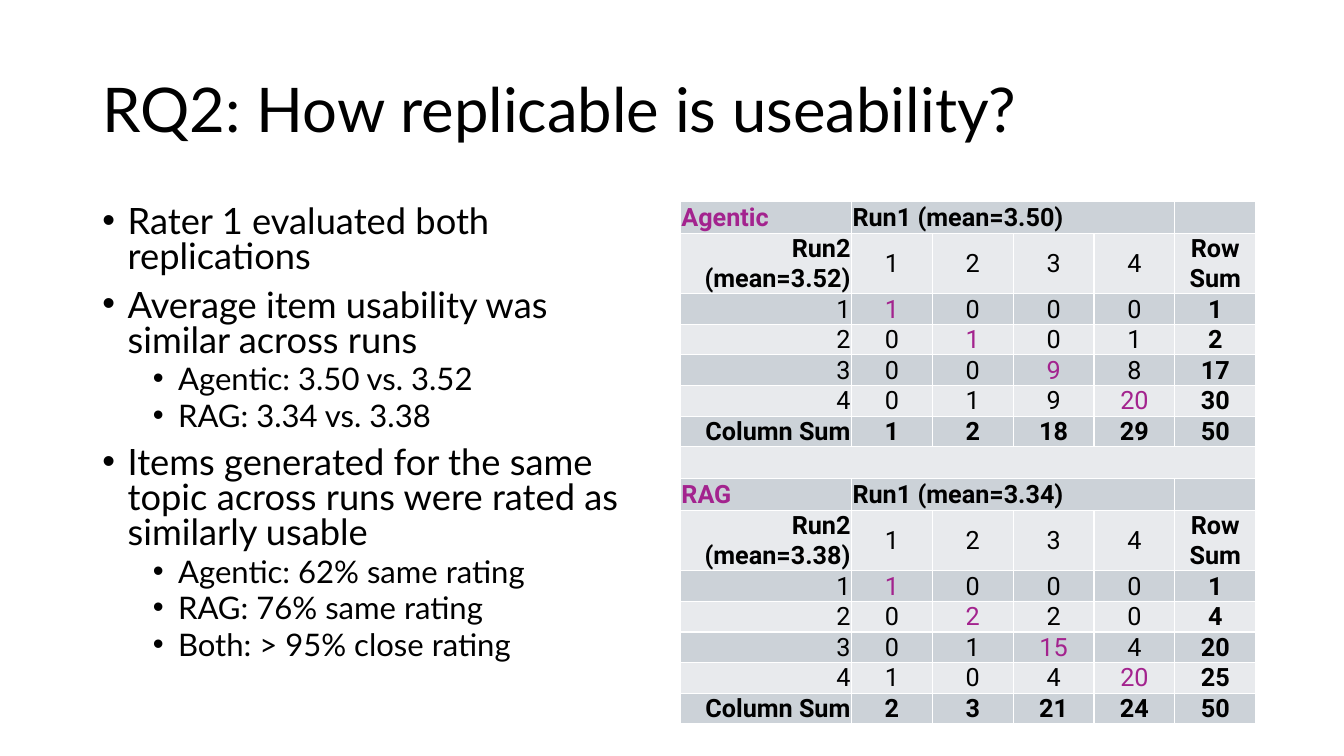
from dataclasses import dataclass

from lxml import etree
from pptx import Presentation
from pptx import util as u
from pptx.dml.color import RGBColor
from pptx.enum import text
from pptx.oxml import ns

PX = 9525


@dataclass(frozen=True)
class Theme:
    ink: str = "000000"
    accent: str = "A3238E"
    rule: str = "FFFFFF"
    bands: tuple = ("CCD2D8", "E8EAED")
    body_font: str = "Lato"
    table_font: str = "Roboto"
    title_size: float = 44
    bullet_sizes: tuple = (25.9, 22.2)
    table_size: float = 18


THEME = Theme()
LEFT, CENTER, RIGHT = text.PP_ALIGN.LEFT, text.PP_ALIGN.CENTER, text.PP_ALIGN.RIGHT

TITLE = "RQ2: How replicable is useability?"
BULLETS = [
    (0, "Rater 1 evaluated both replications"),
    (0, "Average item usability was similar across runs"),
    (1, "Agentic: 3.50 vs. 3.52"),
    (1, "RAG: 3.34 vs. 3.38"),
    (0, "Items generated for the same topic across runs were rated as similarly usable"),
    (1, "Agentic: 62% same rating"),
    (1, "RAG: 76% same rating"),
    (1, "Both: > 95% close rating"),
]
RATINGS = [1, 2, 3, 4]
SYSTEMS = [
    ("Agentic", "3.50", "3.52",
     [[1, 0, 0, 0], [0, 1, 0, 1], [0, 0, 9, 8], [0, 1, 9, 20]]),
    ("RAG", "3.34", "3.38",
     [[1, 0, 0, 0], [0, 2, 2, 0], [0, 1, 15, 4], [1, 0, 4, 20]]),
]
BLOCK_ROWS = 8
ROW_HEIGHT, HEADER_HEIGHT = 29, 57


def px(n):
    return u.Emu(n * PX)


def write(p, content, font=THEME.body_font, size=THEME.table_size,
          color=THEME.ink, bold=False, align=LEFT):
    p.alignment = align
    r = p.add_run()
    r.text = str(content)
    r.font.name = font
    r.font.size = u.Pt(size)
    r.font.bold = bold
    r.font.color.rgb = RGBColor.from_string(color)


def place(sp, left, top, width, height):
    sp.left, sp.top, sp.width, sp.height = map(px, (left, top, width, height))
    sp.text_frame.auto_size = text.MSO_AUTO_SIZE.NONE
    return sp.text_frame


def fill_title(sp):
    tf = place(sp, 88, 38, 1104, 139)
    tf.vertical_anchor = text.MSO_ANCHOR.MIDDLE
    p = tf.paragraphs[0]
    p.line_spacing = 0.9
    write(p, TITLE, size=THEME.title_size)


def fill_bullets(sp):
    tf = place(sp, 88, 192, 544, 457)
    for i, (level, content) in enumerate(BULLETS):
        p = tf.add_paragraph() if i else tf.paragraphs[0]
        p.level = level
        p.line_spacing = 0.8
        p.space_before = u.Pt((10, 5)[level])
        write(p, content, size=THEME.bullet_sizes[level])
        pPr = p._p.get_or_add_pPr()
        pPr.set("marL", str(px((24, 72)[level])))
        pPr.set("indent", str(px(-24)))
        etree.SubElement(pPr, ns.qn("a:buFont")).set("typeface", "Arial")
        etree.SubElement(pPr, ns.qn("a:buChar")).set("char", "•")


def style_cell(cell, band):
    cell.margin_left = cell.margin_right = cell.margin_top = px(1)
    cell.margin_bottom = 0
    cell.vertical_anchor = text.MSO_ANCHOR.MIDDLE
    tcPr = cell._tc.get_or_add_tcPr()
    for side in ("lnL", "lnR", "lnT", "lnB"):
        ln = etree.SubElement(tcPr, ns.qn(f"a:{side}"), w=str(u.Pt(1)))
        solid = etree.SubElement(ln, ns.qn("a:solidFill"))
        etree.SubElement(solid, ns.qn("a:srgbClr")).set("val", THEME.rule)
    cell.fill.solid()
    cell.fill.fore_color.rgb = RGBColor.from_string(band)
    end = etree.SubElement(cell.text_frame.paragraphs[0]._p, ns.qn("a:endParaRPr"))
    end.set("sz", str(THEME.table_size * 100))


def write_cell(cell, content, **fmt):
    p = cell.text_frame.paragraphs[0]
    write(p, content, font=THEME.table_font, **fmt)


def fill_block(table, top, name, run1, run2, counts):
    write_cell(table.cell(top, 0), name, color=THEME.accent, bold=True)
    table.cell(top, 1).merge(table.cell(top, 4))
    write_cell(table.cell(top, 1), f"Run1 (mean={run1})", bold=True)

    column_sums = [sum(column) for column in zip(*counts)]
    rows = [[f"Run2 (mean={run2})", *RATINGS, "Row Sum"]]
    rows += [[rating, *row, sum(row)] for rating, row in zip(RATINGS, counts)]
    rows.append(["Column Sum", *column_sums, sum(column_sums)])
    last = len(rows) - 1
    for r, row in enumerate(rows):
        for c, value in enumerate(row):
            agree = r == c and 0 < r < last
            write_cell(table.cell(top + 1 + r, c), value,
                       align=CENTER if c else RIGHT,
                       color=THEME.accent if agree else THEME.ink,
                       bold=c == 5 or r == last or (r == c == 0))


def add_ratings_table(slide):
    heights = [ROW_HEIGHT] * (BLOCK_ROWS * len(SYSTEMS) - 1)
    for i in range(len(SYSTEMS)):
        heights[i * BLOCK_ROWS + 1] = HEADER_HEIGHT
    widths = [163] + [77] * 5
    frame = slide.shapes.add_table(len(heights), len(widths), px(648), px(192),
                                   px(sum(widths)), px(sum(heights)))
    table = frame.table
    table.first_row = table.horz_banding = False
    for column, width in zip(table.columns, widths):
        column.width = px(width)
    for r, height in enumerate(heights):
        table.rows[r].height = px(height)
        for cell in table.rows[r].cells:
            style_cell(cell, THEME.bands[r % 2])
    for i, system in enumerate(SYSTEMS):
        fill_block(table, i * BLOCK_ROWS, *system)
    table.cell(BLOCK_ROWS - 1, 0).merge(table.cell(BLOCK_ROWS - 1, 5))


def main():
    prs = Presentation()
    prs.slide_width, prs.slide_height = px(1280), px(720)
    slide = prs.slides.add_slide(prs.slide_layouts[1])
    fill_title(slide.shapes.title)
    fill_bullets(slide.placeholders[1])
    add_ratings_table(slide)
    prs.save("out.pptx")


if __name__ == "__main__":
    main()
